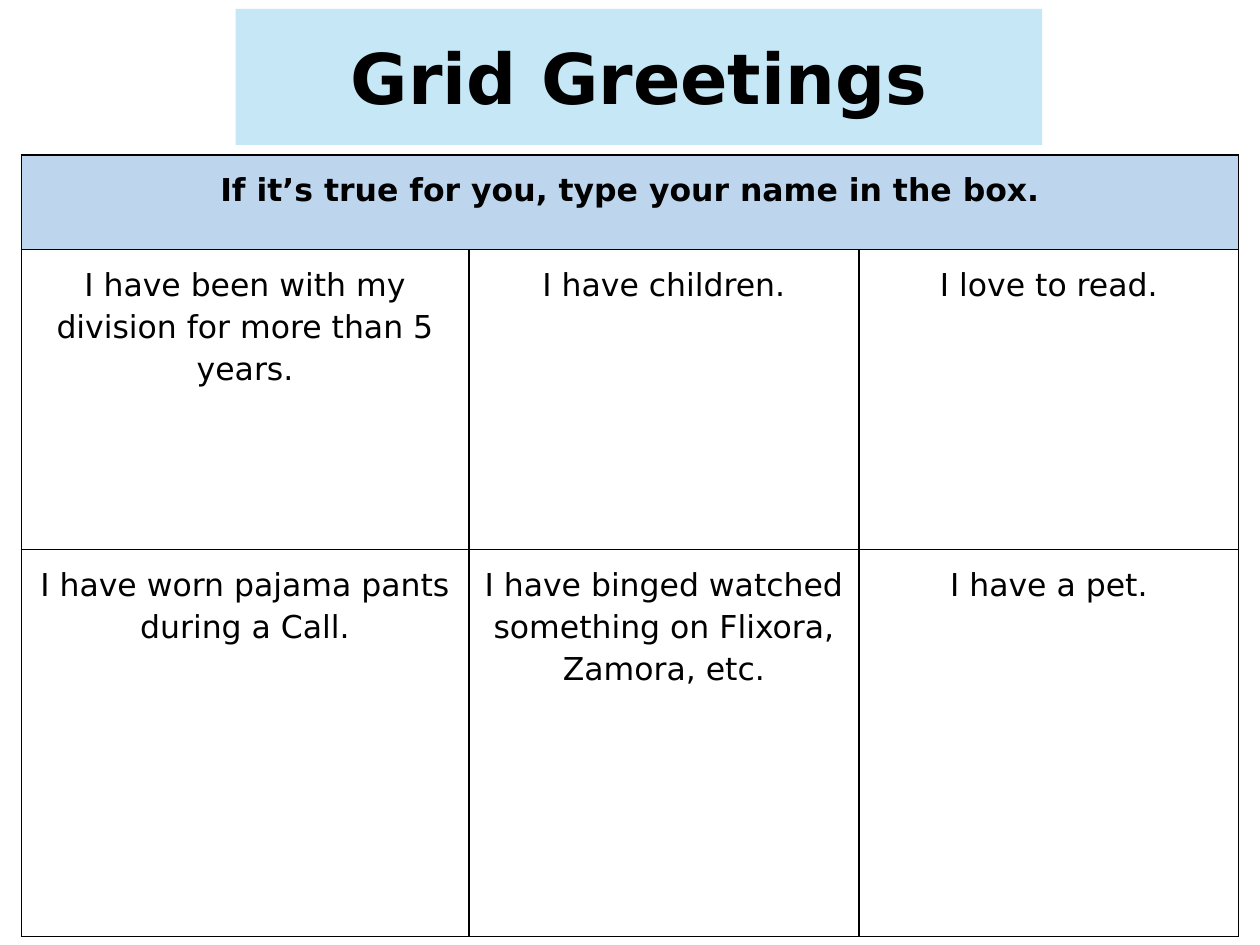
"""Build the Grid Greetings icebreaker slide."""
from dataclasses import dataclass

from lxml.etree import SubElement
from pptx import Presentation
from pptx.dml.color import RGBColor
from pptx.enum.shapes import MSO_SHAPE
from pptx.enum.text import MSO_ANCHOR, PP_ALIGN
from pptx.oxml import parse_xml
from pptx.oxml.ns import nsdecls, qn
from pptx.slide import Slide
from pptx.table import Table
from pptx.text.text import TextFrame
from pptx.util import Cm, Pt

BLACK = RGBColor(0x00, 0x00, 0x00)
TITLE_BLUE = RGBColor(0xA9, 0xDC, 0xF2)
HEADER_BLUE = RGBColor(0xBD, 0xD6, 0xEE)
FONT = "DejaVu Sans"
COLUMN_WIDTHS = (9.02, 7.87, 7.65)
ROW_HEIGHTS = (1.91, 6.05, 7.8)


@dataclass(frozen=True)
class GridCell:
    row: int
    column: int
    text: str = ""
    bold: bool = False
    fill: RGBColor | None = None


HEADER_CELLS = (
    GridCell(0, 0, "If it’s true for you, type your name in the box.", True, HEADER_BLUE),
    GridCell(0, 1),
    GridCell(0, 2),
)
PROMPTS = (
    (
        "I have been with my division for more than 5 years.",
        "I have children.",
        "I love to read.",
    ),
    (
        "I have worn pajama pants during a Call.",
        "I have binged watched something on Flixora, Zamora, etc.",
        "I have a pet.",
    ),
)


def write_text(
    text_frame: TextFrame, text: str, *, size: float, bold: bool = False, line_spacing: float = 1.0
) -> None:
    text_frame.word_wrap = True
    paragraph = text_frame.paragraphs[0]
    paragraph.alignment = PP_ALIGN.CENTER
    paragraph.line_spacing = line_spacing
    run = paragraph.add_run()
    run.text = text
    run.font.name = FONT
    run.font.size = Pt(size)
    run.font.bold = bold
    run.font.color.rgb = BLACK


def draw_title(slide: Slide) -> None:
    title = slide.shapes.add_shape(MSO_SHAPE.RECTANGLE, Cm(4.75), Cm(0.18), Cm(16.26), Cm(2.74))
    title.shadow.inherit = False
    title.line.fill.background()
    title.fill.solid()
    title.fill.fore_color.rgb = TITLE_BLUE
    color = title._element.spPr.find(qn("a:solidFill")).find(qn("a:srgbClr"))
    SubElement(color, qn("a:alpha"), val="67000")
    title.text_frame.vertical_anchor = MSO_ANCHOR.MIDDLE
    write_text(title.text_frame, "Grid Greetings", size=40, bold=True)


def draw_cell(table: Table, grid_cell: GridCell) -> None:
    cell = table.cell(grid_cell.row, grid_cell.column)
    properties = cell._tc.get_or_add_tcPr()
    for side in ("lnL", "lnR", "lnT", "lnB"):
        properties.append(parse_xml(
            f'<a:{side} {nsdecls("a")} w="{Pt(1)}"><a:solidFill>'
            f'<a:srgbClr val="{BLACK}"/></a:solidFill></a:{side}>'
        ))
    cell.margin_left = cell.margin_right = Cm(0.18)
    cell.margin_top = cell.margin_bottom = Cm(0.25)
    if grid_cell.fill is None:
        cell.fill.background()
    else:
        cell.fill.solid()
        cell.fill.fore_color.rgb = grid_cell.fill
    if grid_cell.text:
        write_text(cell.text_frame, grid_cell.text, size=18, bold=grid_cell.bold, line_spacing=1.15)


def draw_grid(slide: Slide) -> None:
    table = slide.shapes.add_table(
        len(ROW_HEIGHTS), len(COLUMN_WIDTHS), Cm(0.43), Cm(3.12),
        Cm(sum(COLUMN_WIDTHS)), Cm(sum(ROW_HEIGHTS)),
    ).table
    table.first_row = table.horz_banding = False
    for column, width in zip(table.columns, COLUMN_WIDTHS):
        column.width = Cm(width)
    for row, height in zip(table.rows, ROW_HEIGHTS):
        row.height = Cm(height)
    table.cell(0, 0).merge(table.cell(0, len(COLUMN_WIDTHS) - 1))
    prompt_cells = [
        GridCell(row, column, text)
        for row, texts in enumerate(PROMPTS, start=1)
        for column, text in enumerate(texts)
    ]
    for grid_cell in (*HEADER_CELLS, *prompt_cells):
        draw_cell(table, grid_cell)


def main() -> None:
    presentation = Presentation()
    presentation.slide_width = Cm(25.4)
    presentation.slide_height = Cm(19.05)
    slide = presentation.slides.add_slide(presentation.slide_layouts[6])
    draw_title(slide)
    draw_grid(slide)
    presentation.save("out.pptx")


if __name__ == "__main__":
    main()
